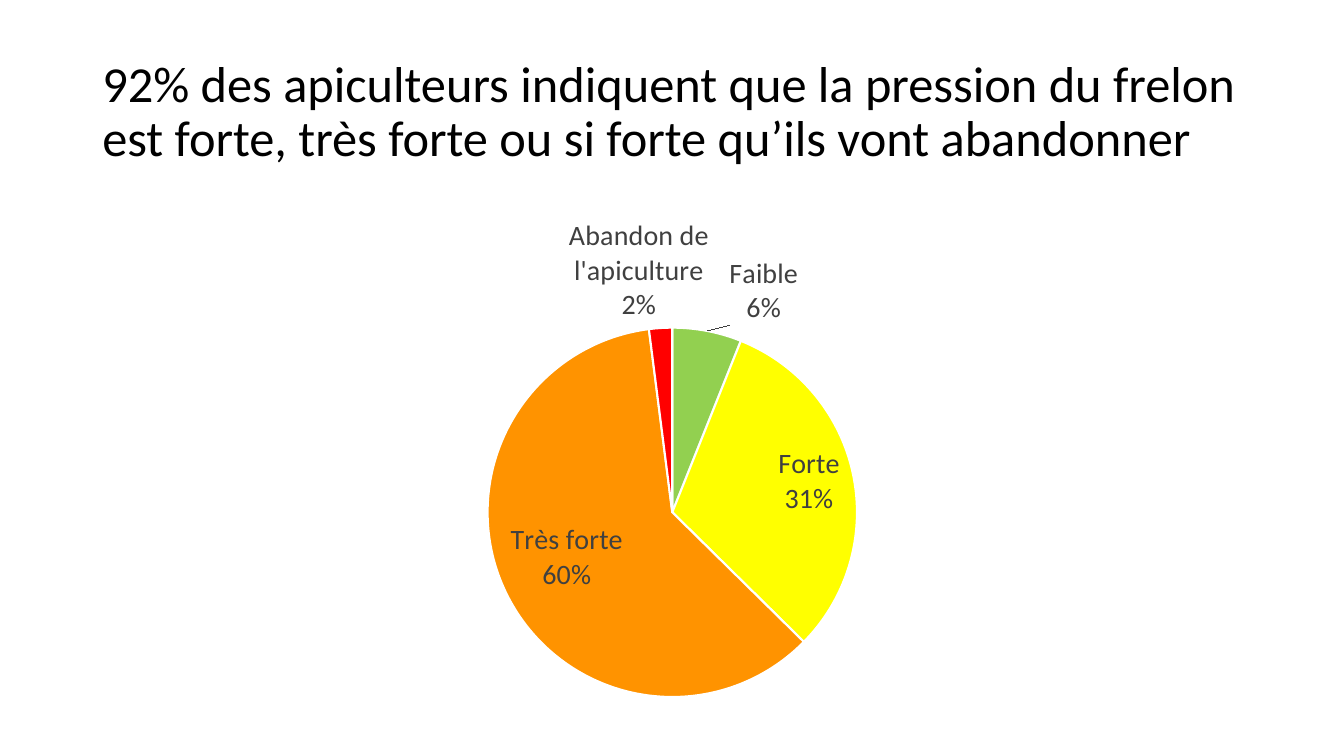
from lxml import etree
from pptx import Presentation
from pptx.chart.data import CategoryChartData
from pptx.dml.color import RGBColor
from pptx.enum.chart import XL_CHART_TYPE, XL_LABEL_POSITION
from pptx.enum.text import MSO_ANCHOR
from pptx.oxml.ns import qn
from pptx.util import Pt

PIE = XL_CHART_TYPE.PIE
BEST_FIT = XL_LABEL_POSITION.BEST_FIT
MIDDLE = MSO_ANCHOR.MIDDLE

BLACK = RGBColor(0, 0, 0)
WHITE = RGBColor(255, 255, 255)
GREY = RGBColor(0x40, 0x40, 0x40)
GREEN = RGBColor(0x92, 0xD0, 0x50)
YELLOW = RGBColor(0xFF, 0xFF, 0)
ORANGE = RGBColor(0xFF, 0x93, 0)
RED = RGBColor(0xFF, 0, 0)

FONT = "Calibri"
TITLE = ("92% des apiculteurs indiquent que la pression du frelon "
         "est forte, très forte ou si forte qu’ils vont abandonner")
PRESSURE = [
    ("Faible", 6, GREEN),
    ("Forte", 31, YELLOW),
    ("Très forte", 60, ORANGE),
    ("Abandon de l'apiculture", 2, RED),
]
PLOT_AREA = {"x": 0.32, "y": 0.24, "w": 0.36, "h": 0.73}


def style_font(font, size, color):
    font.name = FONT
    font.size = Pt(size)
    font.color.rgb = color


def add_title(slide):
    box = slide.shapes.add_textbox(Pt(66), Pt(28.8), Pt(828), Pt(104.4))
    frame = box.text_frame
    frame.word_wrap = True
    frame.vertical_anchor = MIDDLE
    paragraph = frame.paragraphs[0]
    paragraph.line_spacing = 0.9
    run = paragraph.add_run()
    run.text = TITLE
    style_font(run.font, 36, BLACK)


def place_plot(chart):
    plot_area = chart.plots[0]._element.getparent()
    layout = plot_area.find(qn("c:layout"))
    if layout is None:
        layout = etree.Element(qn("c:layout"))
        plot_area.insert(0, layout)
    manual = etree.SubElement(layout, qn("c:manualLayout"))
    settings = {"layoutTarget": "inner", "xMode": "edge", "yMode": "edge", **PLOT_AREA}
    for name, value in settings.items():
        etree.SubElement(manual, qn(f"c:{name}"), val=str(value))


def label_slices(plot):
    plot.has_data_labels = True
    labels = plot.data_labels
    labels.show_category_name = True
    labels.show_value = True
    labels.show_percentage = False
    labels.number_format = '0"%"'
    labels.number_format_is_linked = False
    labels.position = BEST_FIT
    style_font(labels.font, 20, GREY)
    element = labels._element
    separator = etree.Element(qn("c:separator"))
    separator.text = "\n"
    element.find(qn("c:showBubbleSize")).addnext(separator)
    leader = element.find(qn("c:showLeaderLines"))
    if leader is None:
        leader = etree.Element(qn("c:showLeaderLines"))
        separator.addnext(leader)
    leader.set("val", "1")


def add_pressure_chart(slide):
    data = CategoryChartData()
    data.categories = [name for name, value, color in PRESSURE]
    data.add_series("Series 1", [value for name, value, color in PRESSURE])
    chart = slide.shapes.add_chart(
        PIE, Pt(113.76), Pt(146.88), Pt(732.96), Pt(362.16), data).chart
    chart.has_title = False
    chart.has_legend = False
    style_font(chart.font, 10, BLACK)
    plot = chart.plots[0]
    plot.vary_by_categories = True
    for index, (name, value, color) in enumerate(PRESSURE):
        point_format = plot.series[0].points[index].format
        point_format.fill.solid()
        point_format.fill.fore_color.rgb = color
        point_format.line.color.rgb = WHITE
        point_format.line.width = Pt(1.5)
    label_slices(plot)
    place_plot(chart)


def main():
    presentation = Presentation()
    presentation.slide_width = Pt(960)
    presentation.slide_height = Pt(540)
    slide = presentation.slides.add_slide(presentation.slide_layouts[6])
    add_title(slide)
    add_pressure_chart(slide)
    presentation.save("out.pptx")


if __name__ == "__main__":
    main()
